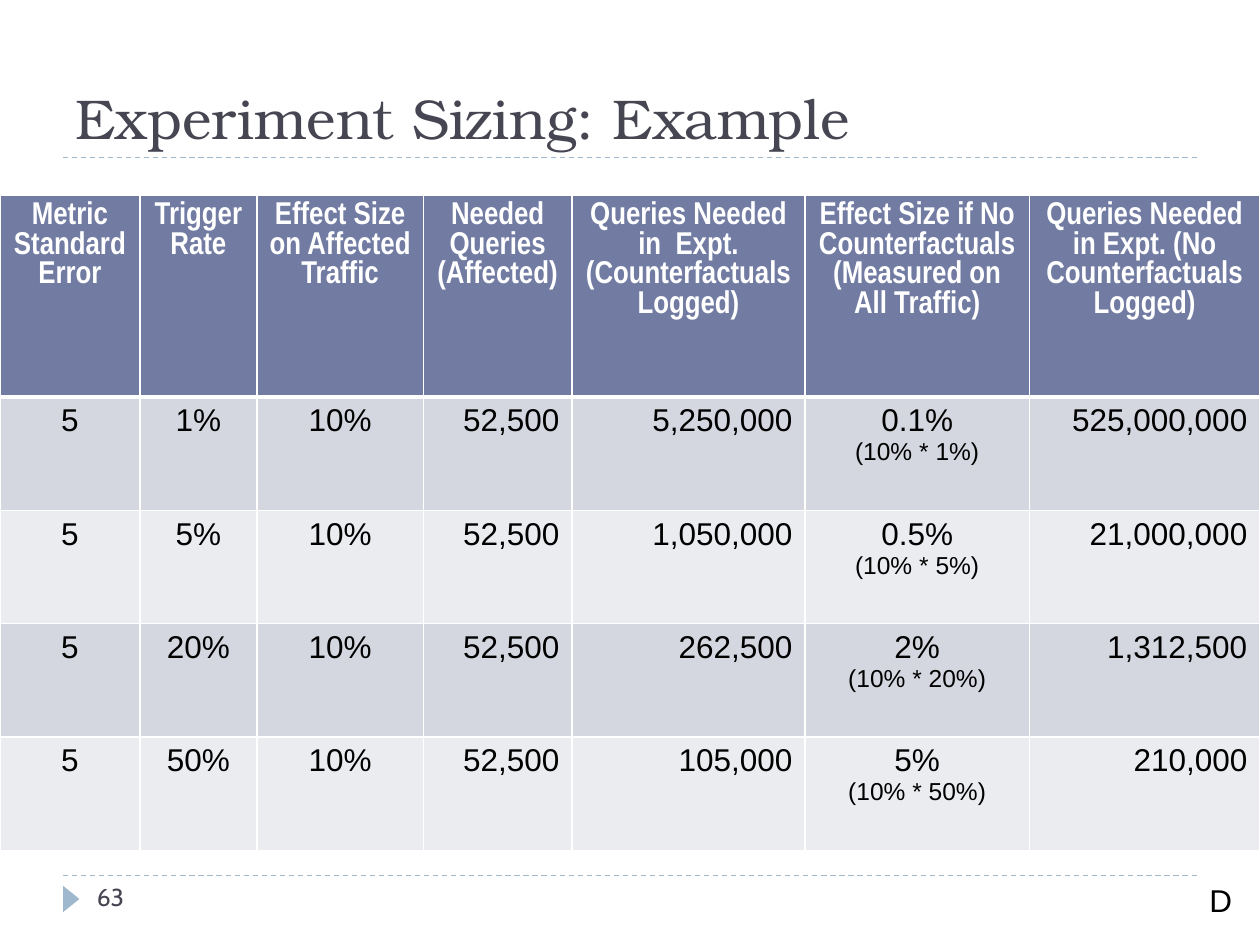
import pptx
import pptx.util
import pptx.dml.color
import pptx.enum.dml
import pptx.enum.shapes
import pptx.enum.text
import pptx.oxml
import pptx.oxml.ns
import lxml.etree

Inch, Pt = pptx.util.Inches, pptx.util.Pt
ALIGN = pptx.enum.text.PP_ALIGN
ANCHOR = pptx.enum.text.MSO_ANCHOR
FIT = pptx.enum.text.MSO_AUTO_SIZE
INK, SKY, WHITE = "464653", "9FB8CD", "FFFFFF"


def tint(value):
    """Turn a hex string into a colour."""
    return pptx.dml.color.RGBColor.from_string(value)


def write(frame, text, size=18, font="Arial", color="000000", bold=False,
          align=ALIGN.LEFT, small=14):
    """Fill a text frame, one paragraph a line; later lines are small."""
    for n, line in enumerate(text.split("\n")):
        para = frame.paragraphs[0] if n == 0 else frame.add_paragraph()
        para.alignment = align
        run = para.add_run()
        run.text = line
        run.font.size = Pt(small if n else size)
        run.font.name = font
        run.font.bold = bold
        run.font.color.rgb = tint(color)


deck = pptx.Presentation()
deck.slide_width, deck.slide_height = Inch(10), Inch(7.5)
slide = deck.slides.add_slide(deck.slide_layouts[5])
shapes = slide.shapes

# Dashed rules above and below the table
for y in (6.95, 1.25):
    rule = shapes.add_connector(pptx.enum.shapes.MSO_CONNECTOR.STRAIGHT,
                                Inch(0.5), Inch(y), Inch(9.5), Inch(y))
    rule.line.color.rgb = tint(SKY)
    rule.line.width = Pt(0.75)
    rule.line.dash_style = pptx.enum.dml.MSO_LINE.DASH
    props = rule._element.spPr
    lxml.etree.SubElement(props, pptx.oxml.ns.qn("a:effectLst"))

# Page marker
mark = shapes.add_shape(pptx.enum.shapes.MSO_SHAPE.ISOSCELES_TRIANGLE,
                        Inch(0.46), Inch(7.07), Inch(0.21), Inch(0.13))
mark.rotation = 90
mark.shadow.inherit = False
mark.fill.solid()
mark.fill.fore_color.rgb = tint(SKY)
mark.line.fill.background()

# Title
title = shapes.title
title.left, title.top = Inch(0.5), Inch(0.17)
title.width, title.height = Inch(9), Inch(1.08)
title.text_frame.auto_size = FIT.NONE
title.text_frame.vertical_anchor = ANCHOR.BOTTOM
write(title.text_frame, "Experiment Sizing: Example", size=32,
      font="TeX Gyre Bonum", color=INK)

# Table
heads = [
    "Metric Standard Error", "Trigger Rate",
    "Effect Size on Affected Traffic", "Needed Queries (Affected)",
    "Queries Needed in  Expt. (Counterfactuals Logged)",
    "Effect Size if No Counterfactuals (Measured on All Traffic)",
    "Queries Needed in Expt. (No Counterfactuals Logged)",
]
cases = [
    ("1%", "5,250,000", "0.1%", "525,000,000"),
    ("5%", "1,050,000", "0.5%", "21,000,000"),
    ("20%", "262,500", "2%", "1,312,500"),
    ("50%", "105,000", "5%", "210,000"),
]
rows = [heads] + [
    ["5", rate, "10%", "52,500", logged, f"{effect}\n(10% * {rate})", total]
    for rate, logged, effect, total in cases
]
widths = [1.11, 0.93, 1.32, 1.18, 1.85, 1.78, 1.83]
heights = [1.6] + [0.9] * len(cases)
right = {3, 4, 6}

grid = shapes.add_table(len(rows), len(heads), 0, Inch(1.55),
                        Inch(sum(widths)), Inch(sum(heights))).table
for col, width in zip(grid.columns, widths):
    col.width = Inch(width)
for row, height in zip(grid.rows, heights):
    row.height = Inch(height)

for r, row in enumerate(rows):
    for c, text in enumerate(row):
        cell = grid.cell(r, c)
        cell.fill.solid()
        if r == 0:
            cell.fill.fore_color.rgb = tint("727CA3")
            write(cell.text_frame, text, font="Arial Narrow", color=WHITE,
                  bold=True, align=ALIGN.CENTER)
        else:
            cell.fill.fore_color.rgb = tint("D5D7E0" if r % 2 else "EBECF0")
            write(cell.text_frame, text,
                  align=ALIGN.RIGHT if c in right else ALIGN.CENTER)
        props = cell._tc.get_or_add_tcPr()
        for n, side in enumerate("LRTB"):
            thick = (side, r) in (("B", 0), ("T", 1))
            props.insert(n, pptx.oxml.parse_xml(
                f'<a:ln{side} {pptx.oxml.ns.nsdecls("a")} '
                f'w="{Pt(3 if thick else 1)}"><a:solidFill>'
                f'<a:srgbClr val="{WHITE}"/></a:solidFill></a:ln{side}>'))

# Footer
page = shapes.add_textbox(Inch(0.67), Inch(6.95), Inch(2.17), Inch(0.4))
page.text_frame.word_wrap = True
write(page.text_frame, "63", size=14, font="Cabin", color=INK)

note = shapes.add_textbox(Inch(9.5), Inch(6.94), Inch(0.38), Inch(0.4))
note.text_frame.word_wrap = False
note.text_frame.auto_size = FIT.SHAPE_TO_FIT_TEXT
write(note.text_frame, "D")

deck.save("out.pptx")
